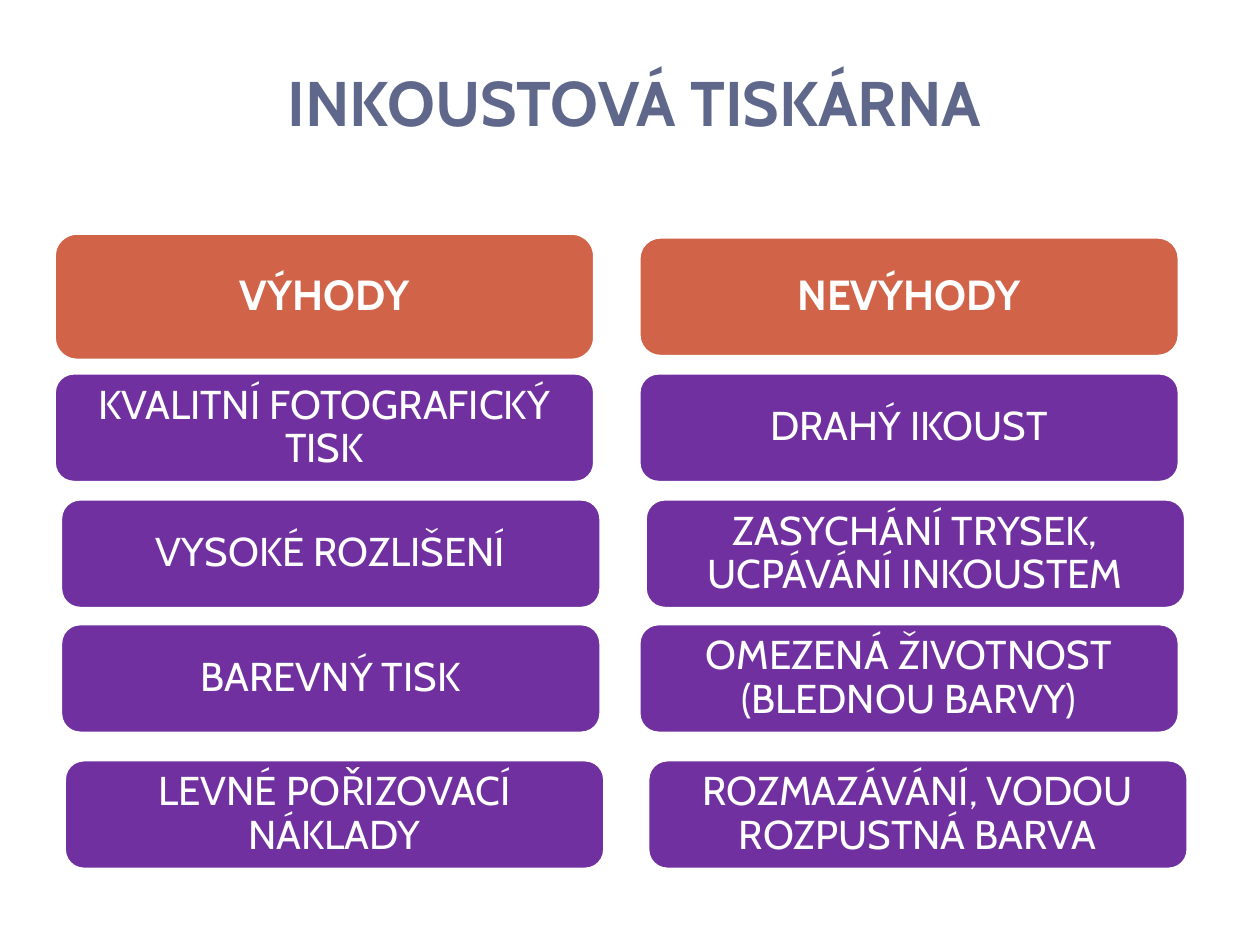
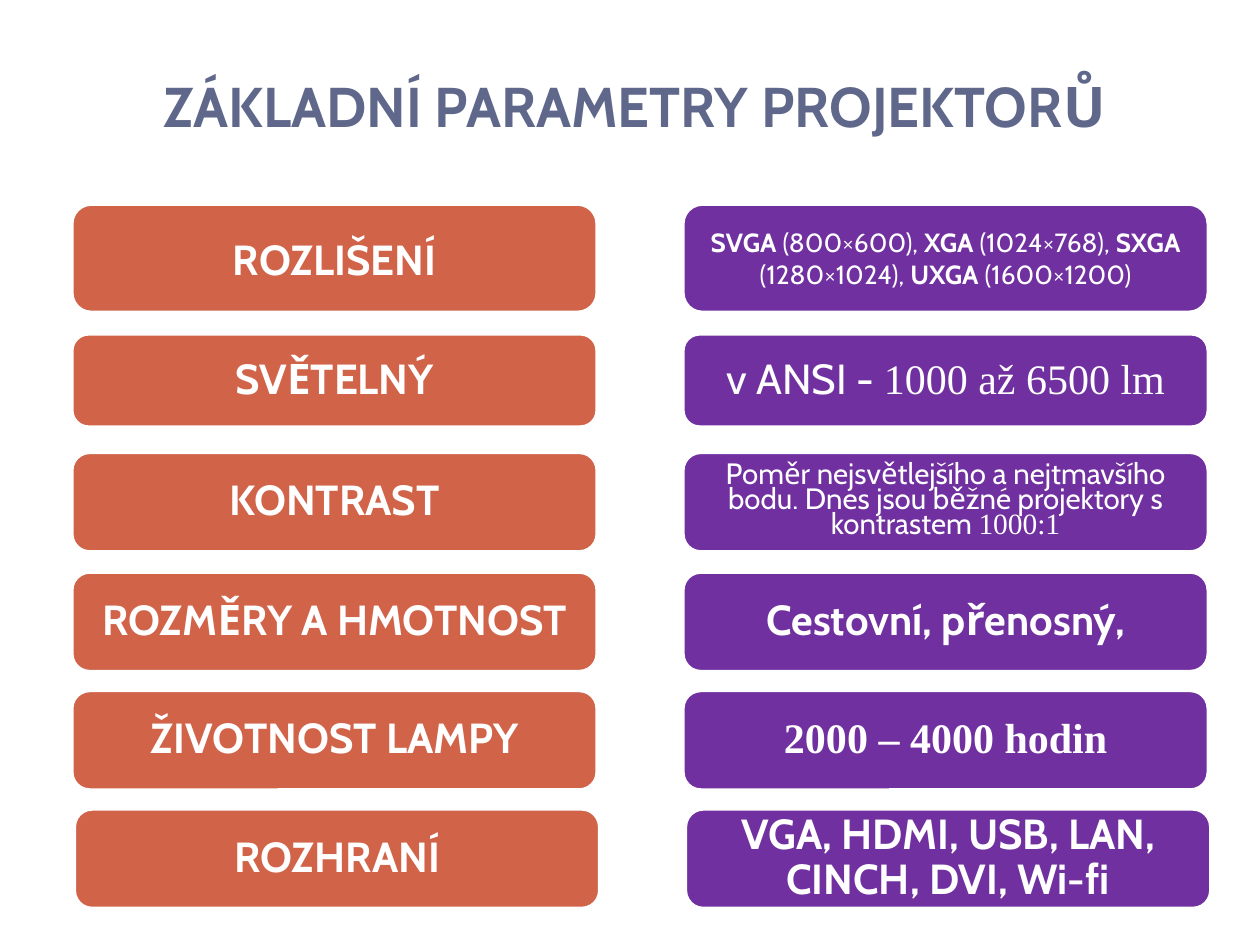
from pptx import Presentation
from pptx.dml.color import RGBColor
from pptx.enum.shapes import MSO_SHAPE
from pptx.enum.text import MSO_ANCHOR, PP_ALIGN
from pptx.util import Pt

PX = 9144
COLORS = {"title": "5F688B", "heading": "D16349", "detail": "7030A0", "white": "FFFFFF"}
SANS, SERIF = "Cabin", "Times New Roman"


def write_text(shape, runs, size, color, anchor, margins, spacing):
    frame = shape.text_frame
    frame.word_wrap = True
    frame.vertical_anchor = anchor
    frame.margin_left = frame.margin_right = margins[0] * PX
    frame.margin_top = frame.margin_bottom = margins[1] * PX
    paragraph = frame.paragraphs[0]
    paragraph.alignment = PP_ALIGN.CENTER
    paragraph.line_spacing = spacing
    for text, bold, font_name in runs:
        run = paragraph.add_run()
        run.text = text
        run.font.size = Pt(size)
        run.font.bold = bold
        run.font.name = font_name
        run.font.color.rgb = RGBColor.from_string(COLORS[color])


def add_card(slide, left, top, width, height, fill, runs, size, spacing=0.9):
    card = slide.shapes.add_shape(
        MSO_SHAPE.ROUNDED_RECTANGLE, left * PX, top * PX, width * PX, height * PX)
    card.adjustments[0] = 0.18
    card.shadow.inherit = False
    card.fill.solid()
    card.fill.fore_color.rgb = RGBColor.from_string(COLORS[fill])
    card.line.color.rgb = RGBColor.from_string(COLORS["white"])
    card.line.width = Pt(2)
    write_text(card, runs, size, "white", MSO_ANCHOR.MIDDLE, (10, 6), spacing)


presentation = Presentation()
presentation.slide_width = 1000 * PX
presentation.slide_height = 750 * PX

slides = []
for title, size in [("INKOUSTOVÁ TISKÁRNA", 36), ("ZÁKLADNÍ PARAMETRY PROJEKTORŮ", 32)]:
    slide = presentation.slides.add_slide(presentation.slide_layouts[6])
    title_box = slide.shapes.add_textbox(43 * PX, 44 * PX, 921 * PX, 68 * PX)
    write_text(title_box, [(title, True, SANS)], size, "title",
               MSO_ANCHOR.BOTTOM, (10, 2), Pt(20))
    slides.append(slide)
printer_slide, projector_slide = slides

for left, top, height, heading in [(43, 185, 101, "VÝHODY"), (507, 188, 95, "NEVÝHODY")]:
    add_card(printer_slide, left, top, 429, height, "heading", [(heading, True, SANS)], 24)

printer_rows = [
    (296, (43, "KVALITNÍ FOTOGRAFICKÝ TISK"), (507, "DRAHÝ IKOUST")),
    (396, (48, "VYSOKÉ ROZLIŠENÍ"), (512, "ZASYCHÁNÍ TRYSEK, UCPÁVÁNÍ INKOUSTEM")),
    (495, (48, "BAREVNÝ TISK"), (507, "OMEZENÁ ŽIVOTNOST (BLEDNOU BARVY)")),
    (603, (51, "LEVNÉ POŘIZOVACÍ NÁKLADY"), (514, "ROZMAZÁVÁNÍ, VODOU ROZPUSTNÁ BARVA")),
]
for top, *cells in printer_rows:
    for left, text in cells:
        add_card(printer_slide, left, top, 429, 87, "detail", [(text, False, SANS)], 23)

resolutions = [
    ("SVGA", True, SANS), (" (800×600), ", False, SANS),
    ("XGA", True, SANS), (" (1024×768), ", False, SANS),
    ("SXGA", True, SANS), (" (1280×1024), ", False, SANS),
    ("UXGA", True, SANS), (" (1600×1200)", False, SANS),
]
luminous_flux = [("v ANSI - ", False, SANS), ("1000 až 6500 lm", False, SERIF)]
contrast = [
    ("Poměr nejsvětlejšího a nejtmavšího bodu. Dnes jsou běžné projektory s kontrastem ",
     False, SANS),
    ("1000:1", False, SERIF),
]
portability = [("Cestovní, přenosný,", True, SANS)]
lamp_life = [("2000 – 4000 hodin", True, SERIF)]
interfaces = [("VGA, HDMI, USB, LAN, CINCH, DVI, Wi-fi", True, SANS)]

projector_rows = [
    (57, 162, 86, "ROZLIŠENÍ", 1.0, resolutions, 15, 1.0),
    (57, 265, 74, "SVĚTELNÝ", 0.9, luminous_flux, 24, 0.9),
    (57, 359, 79, "KONTRAST", 0.9, contrast, 16.8, 0.7),
    (57, 454, 79, "ROZMĚRY A HMOTNOST", 0.9, portability, 24, 0.9),
    (57, 548, 79, "ŽIVOTNOST LAMPY", 0.9, lamp_life, 24, 0.9),
    (59, 642, 79, "ROZHRANÍ", 0.9, interfaces, 24, 0.9),
]
for left, top, height, name, name_spacing, value, size, spacing in projector_rows:
    add_card(projector_slide, left, top, 417, height, "heading",
             [(name, True, SANS)], 24, name_spacing)
    add_card(projector_slide, left + 485, top, 417, height, "detail", value, size, spacing)

presentation.save("out.pptx")
